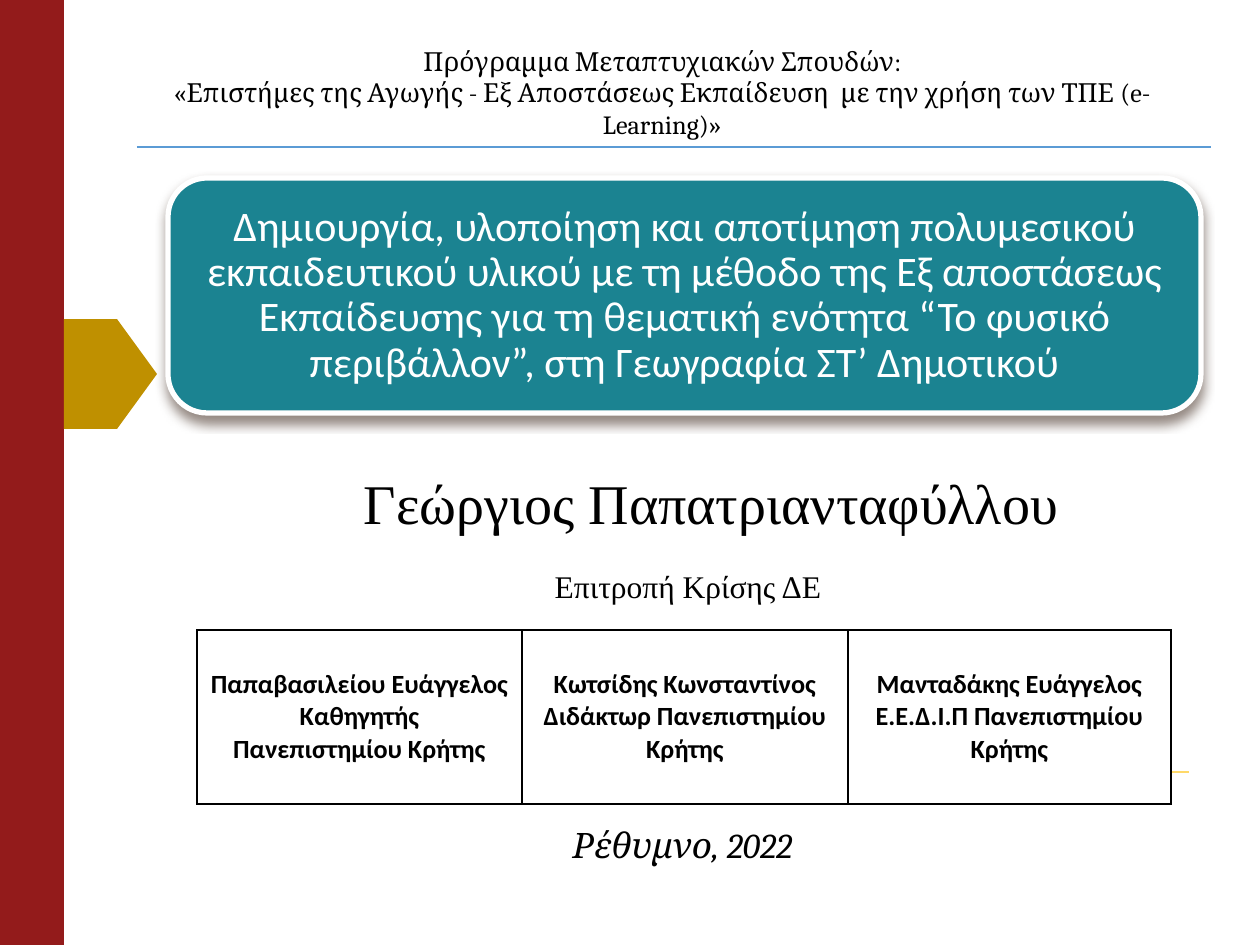
import pptx
import pptx.util
import pptx.dml.color
import pptx.enum.shapes
import pptx.enum.text
import pptx.oxml
import pptx.oxml.ns

RGBColor = pptx.dml.color.RGBColor
Shape = pptx.enum.shapes.MSO_SHAPE
Anchor = pptx.enum.text.MSO_ANCHOR
CENTER = pptx.enum.text.PP_ALIGN.CENTER
PX = 914400 // 126

BLACK = RGBColor(0x00, 0x00, 0x00)
WHITE = RGBColor(0xFF, 0xFF, 0xFF)
RED = RGBColor(0x93, 0x1B, 0x1B)
GOLD = RGBColor(0xBF, 0x90, 0x00)
TEAL = RGBColor(0x1B, 0x83, 0x91)
BLUE = RGBColor(0x5B, 0x9B, 0xD5)
YELLOW = RGBColor(0xFF, 0xC6, 0x1A)
SHADOW = RGBColor(0x4E, 0x3B, 0x30)
NAMESPACE = pptx.oxml.ns.nsdecls("a")


def write(frame, lines, size, font, color=BLACK, bold=False, italic=False):
    frame.text = "\n".join(lines)
    for para in frame.paragraphs:
        para.alignment = CENTER
        para.font.size = pptx.util.Pt(size)
        para.font.name = font
        para.font.color.rgb = color
        para.font.bold = bold
        para.font.italic = italic


def add_block(page, kind, left, top, width, height, color):
    block = page.shapes.add_shape(kind, left * PX, top * PX, width * PX, height * PX)
    block.shadow.inherit = False
    block.fill.solid()
    block.fill.fore_color.rgb = color
    block.line.fill.background()
    return block


deck = pptx.Presentation()
deck.slide_width = pptx.util.Inches(10)
deck.slide_height = pptx.util.Inches(7.5)
page = deck.slides.add_slide(deck.slide_layouts[5])

add_block(page, Shape.RECTANGLE, 0, 0, 64, 945, RED)
marker = add_block(page, Shape.PENTAGON, 64, 319, 93, 110, GOLD)
marker.adjustments[0] = 0.43

panel = add_block(page, Shape.ROUNDED_RECTANGLE, 168, 178, 1033, 235, TEAL)
panel.line.color.rgb = WHITE
panel.line.width = pptx.util.Pt(3)
effects = panel.element.spPr.find(pptx.oxml.ns.qn("a:effectLst"))
effects.append(pptx.oxml.parse_xml(
    f'<a:outerShdw {NAMESPACE} blurRad="76200" dist="50800" dir="5400000" rotWithShape="0">'
    f'<a:srgbClr val="{SHADOW}"><a:alpha val="60000"/></a:srgbClr></a:outerShdw>'))

title = page.shapes.title
page.shapes.element.append(title.element)
title.left, title.top, title.width, title.height = 168 * PX, 178 * PX, 1033 * PX, 235 * PX
frame = title.text_frame
frame.word_wrap = True
frame.auto_size = pptx.enum.text.MSO_AUTO_SIZE.NONE
frame.vertical_anchor = Anchor.MIDDLE
frame.margin_left = frame.margin_right = frame.margin_top = frame.margin_bottom = pptx.util.Inches(0.1)
write(frame, ["Δημιουργία, υλοποίηση και αποτίμηση πολυμεσικού εκπαιδευτικού υλικού "
              "με τη μέθοδο της Εξ αποστάσεως Εκπαίδευσης για τη θεματική ενότητα "
              "“Το φυσικό περιβάλλον”, στη Γεωγραφία ΣΤ’ Δημοτικού"], 24, "Calibri", WHITE)
frame.paragraphs[0].line_spacing = 0.9

captions = [
    (108, 39, 1109, 77, 15, "Cambria", False, Anchor.TOP,
     ["Πρόγραμμα Μεταπτυχιακών Σπουδών:",
      "«Επιστήμες της Αγωγής - Εξ Αποστάσεως Εκπαίδευση\u00a0 με την χρήση των ΤΠΕ (e-Learning)»"]),
    (186, 817, 993, 55, 20, "Cambria", True, Anchor.MIDDLE, ["Ρέθυμνο, 2022"]),
    (348, 462, 727, 84, 32, "Times New Roman", False, Anchor.TOP, ["Γεώργιος Παπατριανταφύλλου"]),
    (217, 561, 942, 50, 18, "Times New Roman", False, Anchor.TOP, ["Επιτροπή Κρίσης ΔΕ"]),
]
for left, top, width, height, size, font, italic, anchor, lines in captions:
    box = page.shapes.add_textbox(left * PX, top * PX, width * PX, height * PX)
    box.text_frame.word_wrap = True
    box.text_frame.vertical_anchor = anchor
    write(box.text_frame, lines, size, font, italic=italic)

for left, top, right, bottom, color in [(137, 147, 1211, 147, BLUE), (226, 770, 1189, 772, YELLOW)]:
    rule = page.shapes.add_connector(pptx.enum.shapes.MSO_CONNECTOR.STRAIGHT,
                                     left * PX, top * PX, right * PX, bottom * PX)
    rule.line.color.rgb = color
    rule.line.width = pptx.util.Pt(0.75)
    rule.element.spPr.append(pptx.oxml.parse_xml(f"<a:effectLst {NAMESPACE}/>"))

committee = [
    (325, ["Παπαβασιλείου Ευάγγελος", "Καθηγητής", "Πανεπιστημίου Κρήτης"]),
    (326, ["Κωτσίδης Κωνσταντίνος", "Διδάκτωρ Πανεπιστημίου Κρήτης"]),
    (323, ["Μανταδάκης Ευάγγελος", "Ε.Ε.Δ.Ι.Π Πανεπιστημίου Κρήτης"]),
]
table = page.shapes.add_table(1, 3, 197 * PX, 630 * PX, 974 * PX, 174 * PX).table
table.first_row = False
table.horz_banding = False
for column, (width, lines) in enumerate(committee):
    table.columns[column].width = width * PX
    cell = table.cell(0, column)
    cell.vertical_anchor = Anchor.MIDDLE
    write(cell.text_frame, lines, 15, "Calibri", bold=True)
    properties = cell._tc.get_or_add_tcPr()
    for side in ("lnL", "lnR", "lnT", "lnB"):
        properties.append(pptx.oxml.parse_xml(
            f'<a:{side} {NAMESPACE} w="12700"><a:solidFill><a:srgbClr val="{BLACK}"/>'
            f"</a:solidFill></a:{side}>"))
    cell.fill.solid()
    cell.fill.fore_color.rgb = WHITE

deck.save("out.pptx")
